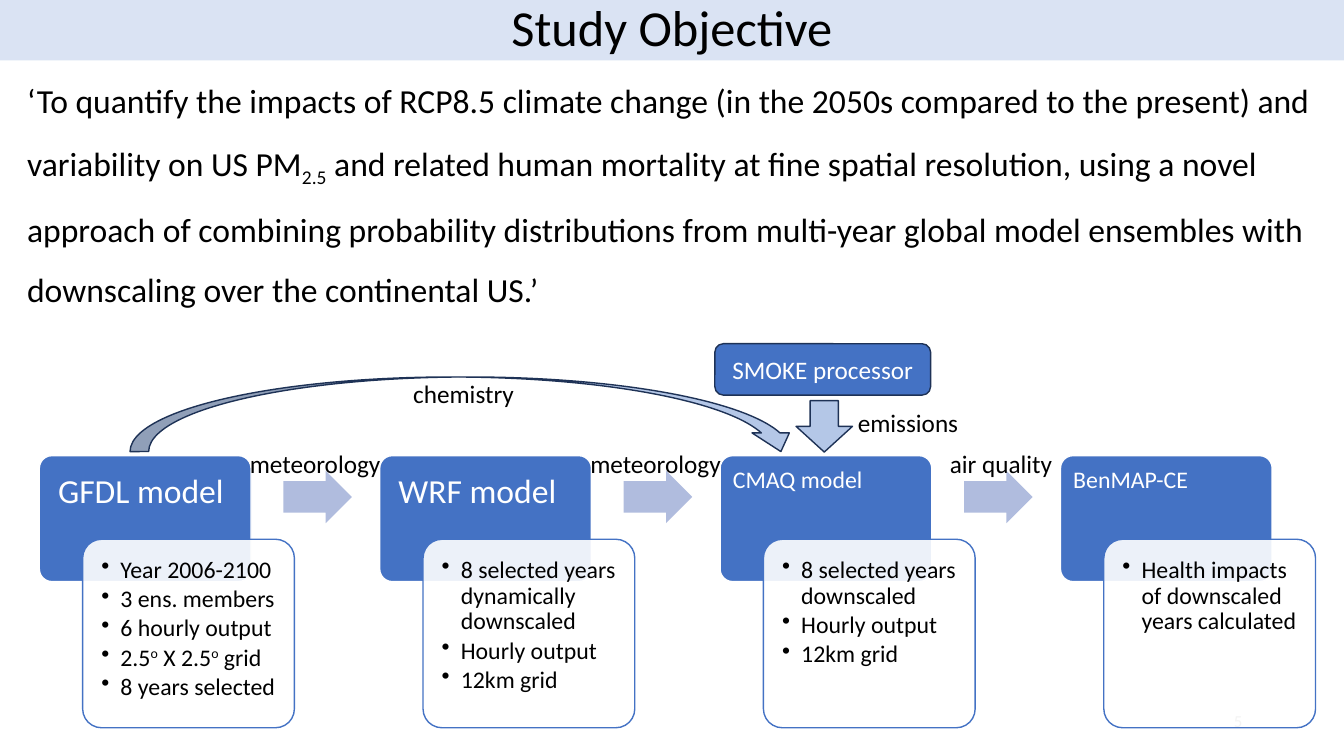
from lxml import etree
from pptx import Presentation
from pptx.dml.color import RGBColor
from pptx.enum.shapes import MSO_SHAPE as Shape
from pptx.enum.text import MSO_ANCHOR as Anchor, PP_ALIGN as Align
from pptx.oxml.ns import qn
from pptx.util import Inches, Pt

FONT = "Calibri"
COLORS = {
    "band": "DAE3F3", "model": "4472C4", "flow": "B0BCDE", "feed": "B4C7E7",
    "outline": "1E3256", "white": "FFFFFF", "text": "000000", "number": "8C8C8C",
}
WIDTH, HEIGHT = 13.33, 7.5
STAGE_LEFT, STAGE_TOP, STAGE_PITCH = 0.39, 4.52, 3.376
HEAD_W, HEAD_H = 2.1, 1.25
CARD_DX, CARD_DY, CARD_H = 0.43, 0.83, 1.87

# Each stage: name, name size, name inset, bullets, label of the arrow that follows.
# A bullet is a list of (text, baseline shift in percent).
STAGES = [
    ("GFDL model", 24, 0.15,
     [[("Year 2006-2100", 0)], [("3 ens. members", 0)], [("6 hourly output", 0)],
      [("2.5", 0), ("o", 30), (" X 2.5", 0), ("o", 30), (" grid", 0)],
      [("8 years selected", 0)]], "meteorology"),
    ("WRF model", 24, 0.15,
     [[("8 selected years dynamically downscaled", 0)], [("Hourly output", 0)],
      [("12km grid", 0)]], "meteorology"),
    ("CMAQ model", 17, 0.09,
     [[("8 selected years downscaled", 0)], [("Hourly output", 0)],
      [("12km grid", 0)]], "air quality"),
    ("BenMAP-CE", 17, 0.09,
     [[("Health impacts of downscaled years calculated", 0)]], None),
]
OBJECTIVE = [
    ("‘To quantify the impacts of RCP8.5 climate change (in the 2050s compared to "
     "the present) and variability on US PM", 0),
    ("2.5", -25),
    (" and related human mortality at fine spatial resolution, using a novel approach "
     "of combining probability distributions from multi-year global model ensembles "
     "with downscaling over the continental US.’", 0),
]


def rgb(name):
    return RGBColor.from_string(COLORS[name])


def add_shape(slide, kind, box, fill, line=None, adjust=()):
    sp = slide.shapes.add_shape(kind, *map(Inches, box))
    sp.shadow.inherit = False
    sp.fill.solid()
    sp.fill.fore_color.rgb = rgb(fill)
    if line:
        sp.line.color.rgb = rgb(line)
        sp.line.width = Pt(1)
    else:
        sp.line.fill.background()
    for i, value in enumerate(adjust):
        sp.adjustments[i] = value
    return sp


def write(sp, paragraphs, size, color="text", align=Align.LEFT, anchor=Anchor.TOP,
          spacing=1.0, inset=None):
    """Fill a shape with paragraphs, each a list of (text, baseline shift)."""
    tf = sp.text_frame
    tf.word_wrap = True
    tf.vertical_anchor = anchor
    if inset is not None:
        tf.margin_left = tf.margin_top = tf.margin_right = Inches(inset)
    for i, runs in enumerate(paragraphs):
        p = tf.paragraphs[0] if i == 0 else tf.add_paragraph()
        p.alignment = align
        p.line_spacing = spacing
        for text, shift in runs:
            r = p.add_run()
            r.text = text
            r.font.name = FONT
            r.font.size = Pt(size)
            r.font.color.rgb = rgb(color)
            if shift:
                r.font._element.set("baseline", str(shift * 1000))
    return tf


def add_text(slide, box, runs, size, **style):
    tb = slide.shapes.add_textbox(*map(Inches, box))
    write(tb, [runs], size, **style)


def add_label(slide, left, top, text):
    add_text(slide, (left, top, 1.68, 0.4), [(text, 0)], 18)


def set_bullets(tf):
    for p in tf.paragraphs:
        p.space_after = Pt(2.5)
        pPr = p._p.get_or_add_pPr()
        pPr.set("marL", str(Inches(0.19)))
        pPr.set("indent", str(-Inches(0.19)))
        etree.SubElement(pPr, qn("a:buChar")).set("char", "•")


def add_header(slide):
    band = add_shape(slide, Shape.RECTANGLE, (0, -0.01, WIDTH, 0.61), "band")
    write(band, [[("Study Objective", 0)]], 36, align=Align.CENTER,
          anchor=Anchor.MIDDLE, spacing=0.9)
    add_text(slide, (0.17, 0.54, 12.99, 2.46), OBJECTIVE, 24, spacing=1.5)


def add_page_number(slide):
    add_text(slide, (9.42, 6.95, 3, 0.4), [("5", 0)], 12, color="number",
             align=Align.RIGHT, anchor=Anchor.MIDDLE)


def add_stage(slide, left, top, name, size, inset, bullets):
    head = add_shape(slide, Shape.ROUNDED_RECTANGLE, (left, top, HEAD_W, HEAD_H),
                     "model", "white", [0.1])
    write(head, [[(name, 0)]], size, "white", spacing=0.9, inset=inset)
    card = add_shape(slide, Shape.ROUNDED_RECTANGLE,
                     (left + CARD_DX, top + CARD_DY, HEAD_W, CARD_H),
                     "white", "model", [0.1])
    color = card.fill._xPr.find(qn("a:solidFill"))[0]
    etree.SubElement(color, qn("a:alpha")).set("val", "90000")
    set_bullets(write(card, bullets, 17, spacing=0.9, inset=0.13))


def add_pipeline(slide, left, top):
    for i, (name, size, inset, bullets, flow) in enumerate(STAGES):
        x = left + i * STAGE_PITCH
        add_stage(slide, x, top, name, size, inset, bullets)
        if flow:
            add_shape(slide, Shape.RIGHT_ARROW, (x + 2.42, top + 0.15, 0.68, 0.52),
                      "flow", adjust=[0.6, 0.5])
    for i, stage in enumerate(STAGES[:-1]):
        nudge = 0.19 if stage[-1] == "air quality" else 0
        add_label(slide, left + i * STAGE_PITCH + 1.99 + nudge, top - 0.12, stage[-1])


def add_feeds(slide, left, top):
    """Chemistry and emissions inputs to the CMAQ model, above the pipeline."""
    down = add_shape(slide, Shape.RIGHT_ARROW, (left + 7.53, top - 0.57, 0.51, 0.56),
                     "feed", "outline")
    down.rotation = 90
    add_shape(slide, Shape.CURVED_DOWN_ARROW, (left + 0.9, top - 0.78, 6.64, 0.74),
              "feed", "outline")
    add_label(slide, left + 3.61, top - 0.82, "chemistry")
    add_label(slide, left + 8.02, top - 0.53, "emissions")
    smoke = add_shape(slide, Shape.ROUNDED_RECTANGLE,
                      (left + 6.7, top - 1.11, 2.14, 0.51), "model", "outline")
    write(smoke, [[("SMOKE processor", 0)]], 18, "white", Align.CENTER, Anchor.MIDDLE)


def main():
    prs = Presentation()
    prs.slide_width, prs.slide_height = Inches(WIDTH), Inches(HEIGHT)
    slide = prs.slides.add_slide(prs.slide_layouts[6])
    add_header(slide)
    add_page_number(slide)
    add_pipeline(slide, STAGE_LEFT, STAGE_TOP)
    add_feeds(slide, STAGE_LEFT, STAGE_TOP)
    prs.save("out.pptx")


if __name__ == "__main__":
    main()
